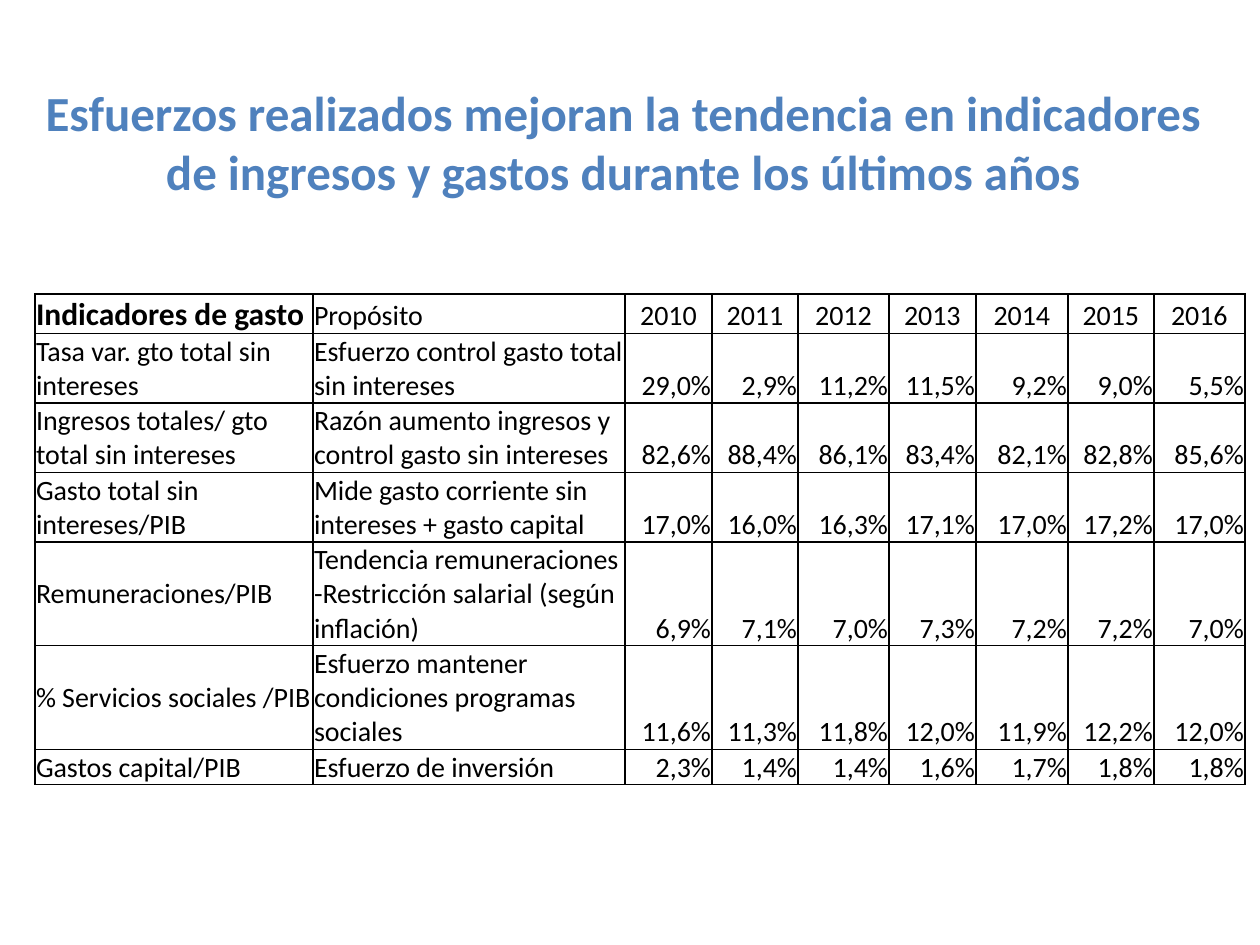
from lxml import etree
from pptx import Presentation, util as u
from pptx.dml.color import RGBColor
from pptx.enum import text as t
from pptx.oxml.ns import qn

TITLE = ("Esfuerzos realizados mejoran la tendencia en indicadores "
         "de ingresos y gastos durante los últimos años")
HEAD = ["Indicadores de gasto", "Propósito", *map(str, range(2010, 2017))]
ROWS = [
    ("Tasa var. gto total sin intereses",
     "Esfuerzo control gasto total sin intereses",
     "29,0%", "2,9%", "11,2%", "11,5%", "9,2%", "9,0%", "5,5%"),
    ("Ingresos totales/ gto total sin intereses",
     "Razón aumento ingresos y control gasto sin intereses",
     "82,6%", "88,4%", "86,1%", "83,4%", "82,1%", "82,8%", "85,6%"),
    ("Gasto total sin intereses/PIB",
     "Mide gasto corriente sin intereses + gasto capital",
     "17,0%", "16,0%", "16,3%", "17,1%", "17,0%", "17,2%", "17,0%"),
    ("Remuneraciones/PIB",
     "Tendencia remuneraciones -Restricción salarial (según inflación)",
     "6,9%", "7,1%", "7,0%", "7,3%", "7,2%", "7,2%", "7,0%"),
    ("% Servicios sociales /PIB",
     "Esfuerzo mantener condiciones programas sociales",
     "11,6%", "11,3%", "11,8%", "12,0%", "11,9%", "12,2%", "12,0%"),
    ("Gastos capital/PIB", "Esfuerzo de inversión",
     "2,3%", "1,4%", "1,4%", "1,6%", "1,7%", "1,8%", "1,8%"),
]
MIDDLE = {"Remuneraciones/PIB", "% Servicios sociales /PIB"}
WIDTHS = [278, 312, 87, 86, 91, 87, 92, 86, 91]
HEIGHTS = [39, 68, 69, 68, 102, 102, 35]
COLORS = {"title": "4F81BD", "ink": "000000"}
FONT = "Calibri"
LEFT, CENTER, RIGHT = t.PP_ALIGN.LEFT, t.PP_ALIGN.CENTER, t.PP_ALIGN.RIGHT


def px(n):
    return u.Emu(round(n * 914400 / 126))


def write(frame, words, size=16, bold=False, color="ink", align=LEFT):
    frame.word_wrap = True
    para = frame.paragraphs[0]
    para.alignment = align
    run = para.add_run()
    run.text = words
    font = run.font
    font.name, font.size, font.bold = FONT, u.Pt(size), bold
    font.color.rgb = RGBColor.from_string(COLORS[color])


def frame_cell(cell):
    """Give a cell thin borders, tight margins and no fill."""
    cell.margin_left = cell.margin_right = cell.margin_top = px(1)
    cell.margin_bottom = 0
    props = cell._tc.get_or_add_tcPr()
    for side in ("lnL", "lnR", "lnT", "lnB"):
        line = etree.SubElement(props, qn("a:" + side), w=str(u.Pt(1)))
        fill = etree.SubElement(line, qn("a:solidFill"))
        etree.SubElement(fill, qn("a:srgbClr"), val=COLORS["ink"])
    cell.fill.background()


def add_title(slide):
    box = slide.shapes.add_textbox(px(25), px(76), px(1196), px(131))
    write(box.text_frame, TITLE, size=28, bold=True, color="title", align=CENTER)


def add_grid(slide):
    data = [HEAD, *ROWS]
    grid = slide.shapes.add_table(len(data), len(HEAD), px(35), px(294),
                                  px(sum(WIDTHS)), px(sum(HEIGHTS))).table
    grid.first_row = grid.horz_banding = False
    for col, width in zip(grid.columns, WIDTHS):
        col.width = px(width)
    for r, (row, height) in enumerate(zip(data, HEIGHTS)):
        grid.rows[r].height = px(height)
        for c, words in enumerate(row):
            cell = grid.cell(r, c)
            frame_cell(cell)
            cell.vertical_anchor = (t.MSO_ANCHOR.MIDDLE if words in MIDDLE
                                    else t.MSO_ANCHOR.BOTTOM)
            corner = r == c == 0
            align = LEFT if c < 2 else RIGHT if r else CENTER
            write(cell.text_frame, words, size=18 if corner else 16,
                  bold=corner, align=align)


def main():
    deck = Presentation()
    deck.slide_width, deck.slide_height = px(1260), px(945)
    slide = deck.slides.add_slide(deck.slide_layouts[6])
    add_grid(slide)
    add_title(slide)
    deck.save("out.pptx")


if __name__ == "__main__":
    main()
